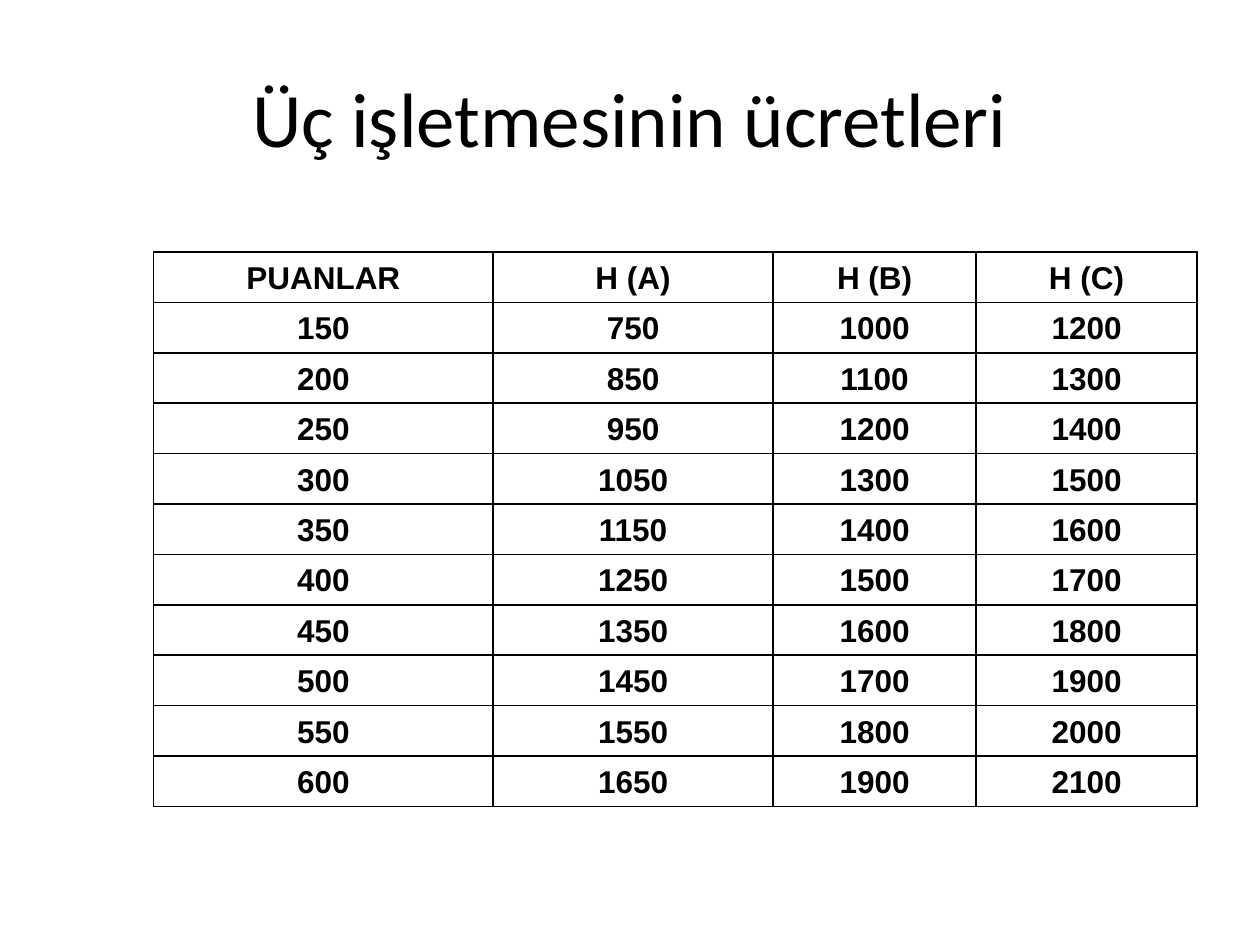
from lxml.etree import SubElement
from pptx import Presentation
from pptx.dml.color import RGBColor
from pptx.enum.text import MSO_ANCHOR as Anchor, PP_ALIGN as Align
from pptx.oxml.ns import qn
from pptx.util import Inches, Pt

COLORS = {"text": "000000", "border": "000000"}
HEADINGS = ["PUANLAR", "H (A)", "H (B)", "H (C)"]
POINTS = range(150, 601, 50)
WAGE_PER_POINT = 2
BASE_WAGES = [450, 700, 900]  # businesses A, B and C
COLUMN_WIDTHS = [2.69, 2.22, 1.61, 1.75]


def write_text(frame, text, *, font, size, bold=False, color=COLORS["text"],
               align=Align.CENTER):
    paragraph = frame.paragraphs[0]
    paragraph.alignment = align
    run = paragraph.add_run()
    run.text = text
    run.font.name = font
    run.font.size = Pt(size)
    run.font.bold = bold
    run.font.color.rgb = RGBColor.from_string(color)


def add_borders(cell, width=1):
    properties = cell._tc.get_or_add_tcPr()
    for side in ("a:lnL", "a:lnR", "a:lnT", "a:lnB"):
        line = SubElement(properties, qn(side), w=str(Pt(width)))
        fill = SubElement(line, qn("a:solidFill"))
        SubElement(fill, qn("a:srgbClr"), val=COLORS["border"])


def place_title(slide, left, top, width, height):
    title = slide.shapes.title
    title.left, title.top, title.width, title.height = left, top, width, height
    title.text_frame.vertical_anchor = Anchor.MIDDLE
    write_text(title.text_frame, "Üç işletmesinin ücretleri",
               font="Calibri", size=44)


def wage_rows():
    """Return the headings followed by each score and its three wages."""
    return [HEADINGS] + [
        [points] + [base + WAGE_PER_POINT * points for base in BASE_WAGES]
        for points in POINTS
    ]


def add_wage_table(slide, left, top, width, height):
    rows = wage_rows()
    table = slide.shapes.add_table(
        len(rows), len(HEADINGS), left, top, width, height).table
    table.first_row = table.horz_banding = False
    for column, share in zip(table.columns, COLUMN_WIDTHS):
        column.width = int(width * share / sum(COLUMN_WIDTHS))
    for row, values in zip(table.rows, rows):
        row.height = height // len(rows)
        for cell, value in zip(row.cells, values):
            add_borders(cell)
            cell.fill.background()
            cell.vertical_anchor = Anchor.BOTTOM
            write_text(cell.text_frame, str(value),
                       font="Arial", size=18, bold=True)


def main():
    deck = Presentation()
    deck.slide_width, deck.slide_height = Inches(10), Inches(7.5)
    slide = deck.slides.add_slide(deck.slide_layouts.get_by_name("Title Only"))
    place_title(slide, Inches(0.5), Inches(0.3), Inches(9), Inches(1.25))
    add_wage_table(slide, Inches(1.22), Inches(2), Inches(8.28), Inches(4.4))
    deck.save("out.pptx")


if __name__ == "__main__":
    main()
